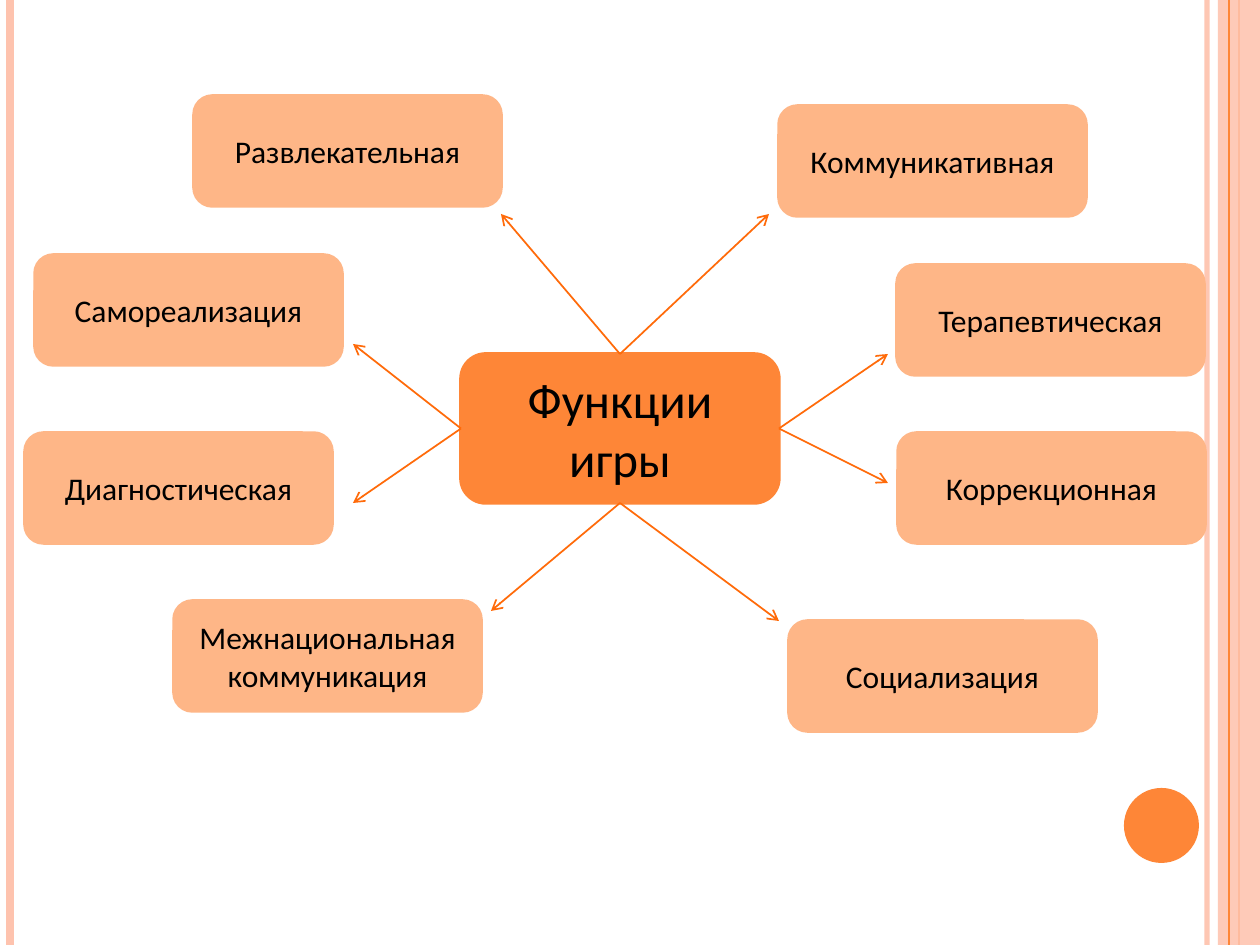
from lxml import etree
from pptx import Presentation
from pptx import util as u
from pptx.dml.color import RGBColor
from pptx.enum import shapes, text
from pptx.oxml.ns import qn

ORANGE, PEACH, PINK, ARROW, BLACK = "FE8637", "FEB687", "FEC3AE", "FF6B0A", "000000"
TOP, LEFT, BOTTOM, RIGHT = range(4)
WIDTH, HEIGHT = 1260, 945
BOX_W, BOX_H = 307, 110

FUNCTIONS = [
    ("Развлекательная", 194, 96),
    ("Самореализация", 35, 255),
    ("Диагностическая", 25, 433),
    ("Межнациональная коммуникация", 174, 601),
    ("Социализация", 789, 621),
    ("Коррекционная", 898, 433),
    ("Терапевтическая", 897, 265),
    ("Коммуникативная", 779, 106),
]
ARROWS = [
    (TOP, 501, 214), (TOP, 769, 214),
    (BOTTOM, 491, 611), (BOTTOM, 779, 621),
    (RIGHT, 888, 483), (RIGHT, 888, 354),
    (LEFT, 353, 344), (LEFT, 353, 503),
]


def px(n):
    return u.Emu(round(n * 914400 / 126))


def rgb(value):
    return RGBColor.from_string(value)


class Deck:
    """Style and current slide, with a method for each kind of element."""

    font = "Calibri"

    def __init__(self, prs):
        self.slide = prs.slides.add_slide(prs.slide_layouts[6])

    def set_alpha(self, fill, percent):
        color = fill._xPr.find(".//" + qn("a:srgbClr"))
        etree.SubElement(color, qn("a:alpha"), val=str(percent * 1000))

    def shape(self, kind, x, y, w, h, color, alpha=None):
        sp = self.slide.shapes.add_shape(kind, px(x), px(y), px(w), px(h))
        sp.shadow.inherit = False
        sp.fill.solid()
        sp.fill.fore_color.rgb = rgb(color)
        sp.line.fill.background()
        if alpha:
            self.set_alpha(sp.fill, alpha)
        return sp

    def box(self, label, x, y, w, h, color, size):
        sp = self.shape(shapes.MSO_SHAPE.ROUNDED_RECTANGLE, x, y, w, h, color)
        sp.line.color.rgb = rgb(color)
        sp.line.width = u.Pt(2)
        tf = sp.text_frame
        tf.word_wrap = True
        tf.vertical_anchor = text.MSO_ANCHOR.MIDDLE
        p = tf.paragraphs[0]
        p.alignment = text.PP_ALIGN.CENTER
        r = p.add_run()
        r.text = label
        r.font.name = self.font
        r.font.size = u.Pt(size)
        r.font.color.rgb = rgb(BLACK)
        return sp

    def line(self, x1, y1, x2, y2, color, width, alpha=None):
        cxn = self.slide.shapes.add_connector(
            shapes.MSO_CONNECTOR.STRAIGHT, px(x1), px(y1), px(x2), px(y2))
        cxn.line.color.rgb = rgb(color)
        cxn.line.width = u.Pt(width)
        if alpha:
            self.set_alpha(cxn.line.fill, alpha)
        etree.SubElement(cxn._element.spPr, qn("a:effectLst"))
        return cxn

    def rule(self, x, color, width, alpha=None):
        return self.line(x, 0, x, HEIGHT, color, width, alpha)

    def arrow(self, source, side, x, y):
        cxn = self.line(x, y, x, y, ARROW, 1)
        cxn.begin_connect(source, side)
        etree.SubElement(cxn.line._get_or_add_ln(), qn("a:tailEnd"), type="arrow")


def main():
    prs = Presentation()
    prs.slide_width, prs.slide_height = px(WIDTH), px(HEIGHT)
    deck = Deck(prs)

    deck.rule(1207, PINK, 3, 93)
    deck.rule(10, PINK, 4.5)
    deck.rule(1239, ORANGE, 1.5)
    deck.shape(shapes.MSO_SHAPE.RECTANGLE, 1218, 0, 42, HEIGHT, PINK, 87)
    deck.rule(1229, ORANGE, 0.75)
    deck.shape(shapes.MSO_SHAPE.OVAL, 1124, 788, 75, 75, ORANGE)

    core = deck.box("Функции игры", 461, 354, 318, 149, ORANGE, 28)
    for label, x, y in FUNCTIONS:
        deck.box(label, x, y, BOX_W, BOX_H, PEACH, 18)
    for side, x, y in ARROWS:
        deck.arrow(core, side, x, y)

    prs.save("out.pptx")


if __name__ == "__main__":
    main()
